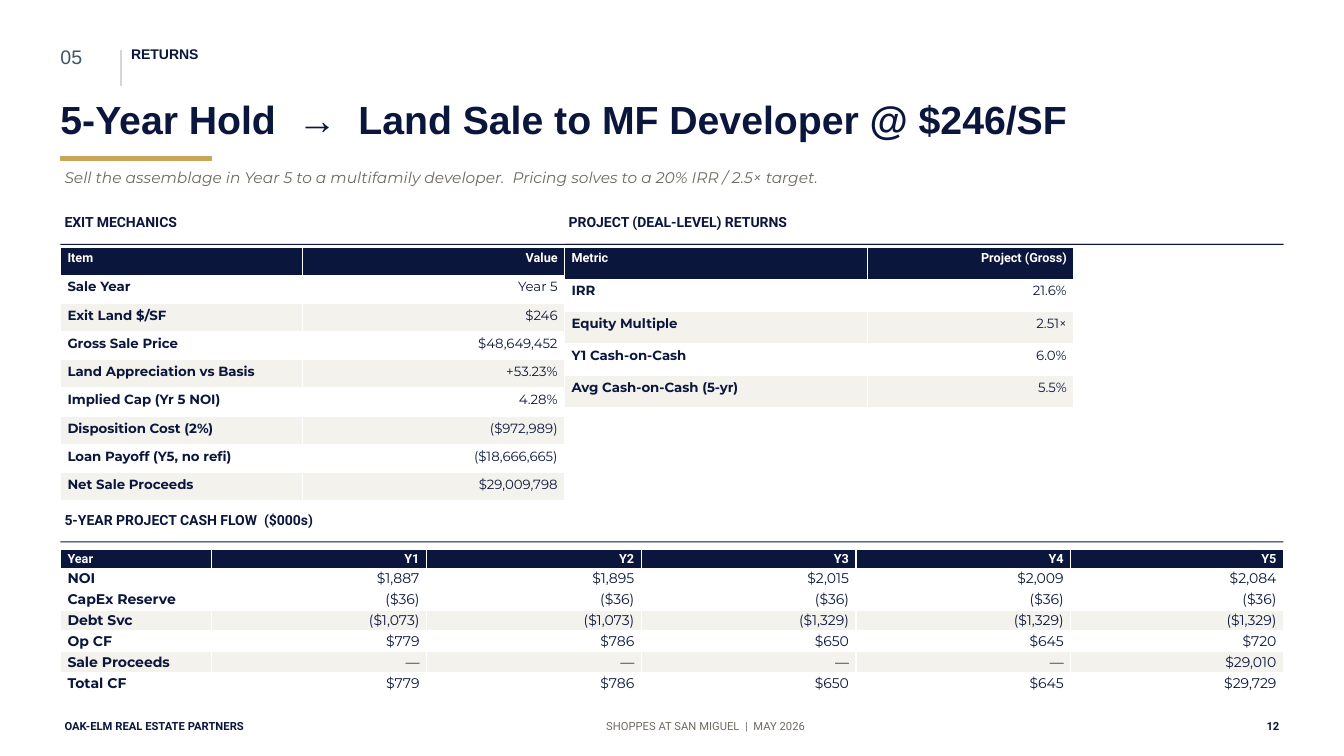
from pptx import Presentation
from pptx.dml.color import RGBColor
from pptx.enum.shapes import MSO_CONNECTOR as Connector, MSO_SHAPE as Preset
from pptx.enum.text import MSO_AUTO_SIZE as AutoSize, PP_ALIGN as Align
from pptx.oxml.xmlchemy import OxmlElement
from pptx.util import Inches, Pt

NAVY = RGBColor(0x0B, 0x16, 0x3C)
GOLD = RGBColor(0xC9, 0xA5, 0x57)
SLATE = RGBColor(0x3E, 0x56, 0x68)
STONE = RGBColor(0x6E, 0x6A, 0x61)
SILVER = RGBColor(0xD4, 0xD6, 0xDC)
IVORY = RGBColor(0xF4, 0xF2, 0xED)
WHITE = RGBColor(0xFF, 0xFF, 0xFF)


class ReturnsSlide:
    """Holds the house style and the slide that its methods draw on."""

    heading_font = "Arial"
    label_font = "Roboto"
    body_font = "Montserrat"
    left = 0.6
    width = 12.13
    inset = (0.04, 0.02)

    def __init__(self, deck):
        self.slide = deck.slides.add_slide(deck.slide_layouts[6])
        self.shapes = self.slide.shapes

    def add_words(self, paragraph, words, font, size, color, bold=False, italic=False,
                  align=Align.LEFT):
        paragraph.alignment = align
        run = paragraph.add_run()
        run.text = words
        run.font.name = font
        run.font.size = Pt(size)
        run.font.color.rgb = color
        run.font.bold = bold
        run.font.italic = italic

    def text(self, words, x, y, w, h, font, size, color, inset=inset, **style):
        frame = self.shapes.add_textbox(Inches(x), Inches(y), Inches(w), Inches(h)).text_frame
        frame.word_wrap = True
        frame.auto_size = AutoSize.SHAPE_TO_FIT_TEXT
        frame.margin_left = frame.margin_right = Inches(inset[0])
        frame.margin_top = frame.margin_bottom = Inches(inset[1])
        self.add_words(frame.paragraphs[0], words, font, size, color, **style)

    def heading(self, words, x, y, w, h, size, color=NAVY, bold=True):
        self.text(words, x, y, w, h, self.heading_font, size, color, inset=(0, 0), bold=bold)

    def footer(self, words, x, w, color=NAVY, bold=True, align=Align.LEFT):
        self.text(words, x, 7.12, w, 0.3, self.label_font, 8, color, bold=bold, align=align)

    def bar(self, x, y, w, h, color, outline=None):
        bar = self.shapes.add_shape(Preset.RECTANGLE, Inches(x), Inches(y), Inches(w), Inches(h))
        bar.shadow.inherit = False
        bar.fill.solid()
        bar.fill.fore_color.rgb = color
        if outline:
            bar.line.color.rgb = color
            bar.line.width = Pt(outline)
        else:
            bar.line.fill.background()

    def divider(self, x, top, bottom):
        divider = self.shapes.add_connector(
            Connector.STRAIGHT, Inches(x), Inches(top), Inches(x), Inches(bottom))
        divider.line.color.rgb = SILVER
        divider.line.width = Pt(1.5)
        divider._element.spPr.append(OxmlElement("a:effectLst"))

    def section(self, title, x, y, title_width, rule_width):
        self.text(title, x, y, title_width, 0.3, self.label_font, 10, NAVY, bold=True)
        self.bar(x, y + 0.32, rule_width, 0.01, NAVY)

    def table(self, rows, x, y, columns, row_height, shaded, size=9.5, pad=0.04):
        table = self.shapes.add_table(
            len(rows), len(columns), Inches(x), Inches(y),
            Inches(sum(columns)), Inches(row_height * len(rows))).table
        table.horz_banding = False
        for column, width in zip(table.columns, columns):
            column.width = Inches(width)
        for r, row in enumerate(rows):
            for c, words in enumerate(row):
                cell = table.cell(r, c)
                cell.margin_left = cell.margin_right = Inches(0.07)
                cell.margin_top = cell.margin_bottom = Inches(pad)
                cell.fill.solid()
                cell.fill.fore_color.rgb = NAVY if r == 0 else IVORY if r in shaded else WHITE
                font, points, color = (
                    (self.label_font, 9, WHITE) if r == 0 else (self.body_font, size, NAVY))
                self.add_words(cell.text_frame.paragraphs[0], words, font, points, color,
                               bold=r == 0 or c == 0, align=Align.RIGHT if c else Align.LEFT)


EXIT_MECHANICS = [
    ("Item", "Value"),
    ("Sale Year", "Year 5"),
    ("Exit Land $/SF", "$246"),
    ("Gross Sale Price", "$48,649,452"),
    ("Land Appreciation vs Basis", "+53.23%"),
    ("Implied Cap (Yr 5 NOI)", "4.28%"),
    ("Disposition Cost (2%)", "($972,989)"),
    ("Loan Payoff (Y5, no refi)", "($18,666,665)"),
    ("Net Sale Proceeds", "$29,009,798"),
]
PROJECT_RETURNS = [
    ("Metric", "Project (Gross)"),
    ("IRR", "21.6%"),
    ("Equity Multiple", "2.51×"),
    ("Y1 Cash-on-Cash", "6.0%"),
    ("Avg Cash-on-Cash (5-yr)", "5.5%"),
]
CASH_FLOW = [
    ("Year", "Y1", "Y2", "Y3", "Y4", "Y5"),
    ("NOI", "$1,887", "$1,895", "$2,015", "$2,009", "$2,084"),
    ("CapEx Reserve", *["($36)"] * 5),
    ("Debt Svc", *["($1,073)"] * 2, *["($1,329)"] * 3),
    ("Op CF", "$779", "$786", "$650", "$645", "$720"),
    ("Sale Proceeds", *["—"] * 4, "$29,010"),
    ("Total CF", "$779", "$786", "$650", "$645", "$29,729"),
]


def main():
    deck = Presentation()
    deck.slide_width = Inches(13.33)
    deck.slide_height = Inches(7.5)
    page = ReturnsSlide(deck)
    left, width = page.left, page.width
    middle = 5.6

    page.heading("05", left, 0.45, 0.7, 0.45, 14, SLATE, bold=False)
    page.divider(1.2, 0.5, 0.85)
    page.heading("RETURNS", 1.3, 0.45, 8, 0.4, 10)
    page.heading("5-Year Hold  →  Land Sale to MF Developer @ $246/SF", left, 0.95, width, 0.55, 28)
    page.bar(left, 1.55, 1.5, 0.04, GOLD, outline=0.5)
    page.text("Sell the assemblage in Year 5 to a multifamily developer.  "
              "Pricing solves to a 20% IRR / 2.5× target.",
              left, 1.65, width, 0.4, page.body_font, 11, STONE, italic=True)

    page.section("EXIT MECHANICS", left, 2.1, 10, width)
    page.table(EXIT_MECHANICS, left, 2.45, [2.4, 2.6], 0.28, range(2, 9, 2))
    page.section("PROJECT (DEAL-LEVEL) RETURNS", middle, 2.1, 7, left + width - middle)
    page.table(PROJECT_RETURNS, middle, 2.45, [3, 2.05], 0.32, range(2, 5, 2))
    page.section("5-YEAR PROJECT CASH FLOW  ($000s)", left, 5.05, 10, width)
    page.table(CASH_FLOW, left, 5.45, [1.5, *[2.13] * 4, 2.11], 0.19, range(3, 6, 2),
               size=10, pad=0.02)

    page.footer("OAK-ELM REAL ESTATE PARTNERS", left, 5)
    page.footer("SHOPPES AT SAN MIGUEL  |  MAY 2026", 5, 4, STONE, bold=False, align=Align.CENTER)
    page.footer("12", 11.73, 1, align=Align.RIGHT)
    deck.save("out.pptx")


if __name__ == "__main__":
    main()
